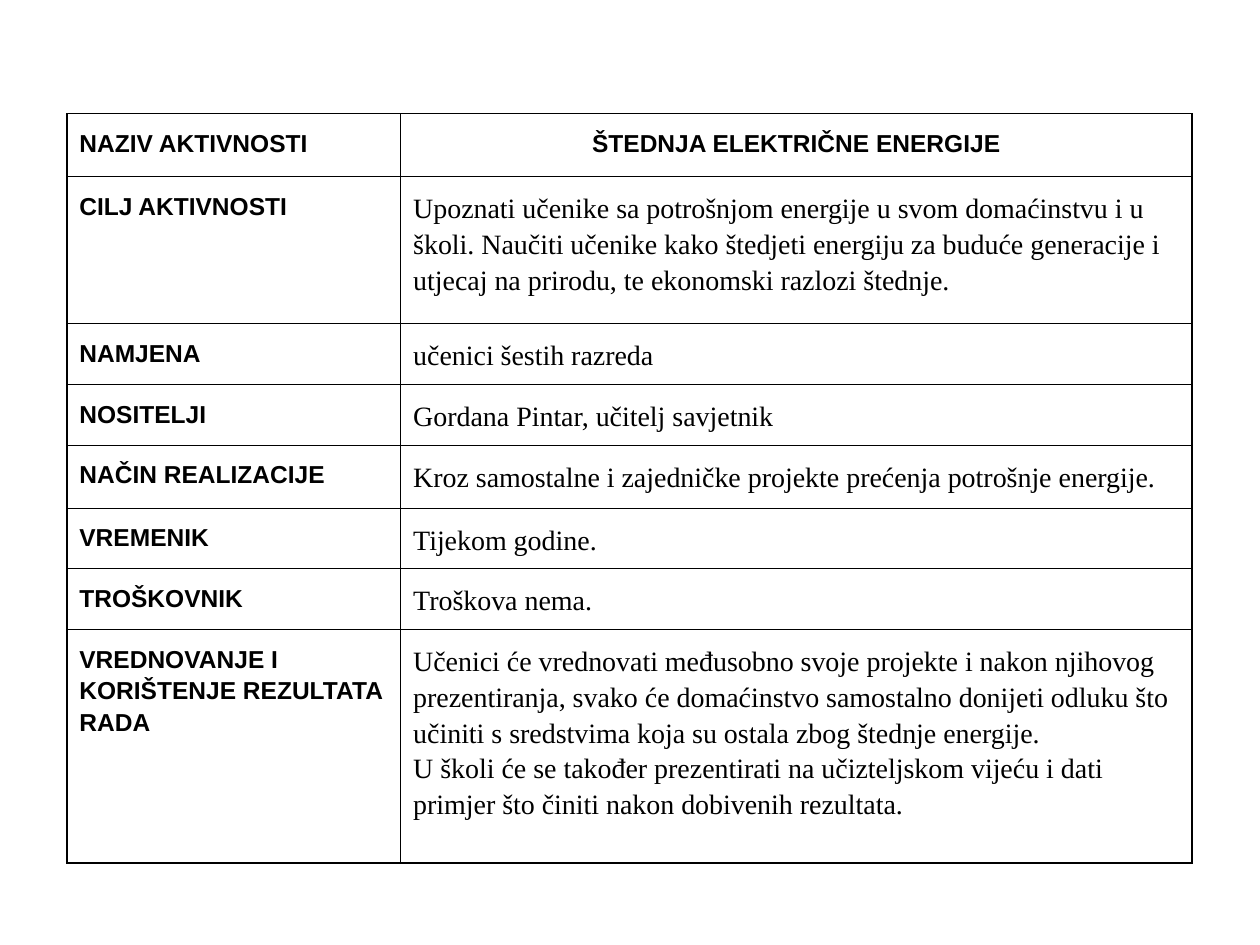
from lxml.etree import SubElement
from pptx import Presentation
from pptx.dml.color import RGBColor
from pptx.enum.text import PP_ALIGN as Align
from pptx.oxml.ns import qn
from pptx.util import Cm, Pt

INK = "000000"
COLUMN_WIDTHS = (6.73, 15.95)
ACTIVITY = [  # label, paragraphs, row height in cm
    ("NAZIV AKTIVNOSTI", ["ŠTEDNJA ELEKTRIČNE ENERGIJE"], 1.27),
    ("CILJ AKTIVNOSTI",
     ["Upoznati učenike sa potrošnjom energije u svom domaćinstvu i u školi. "
      "Naučiti učenike kako štedjeti energiju za buduće generacije i utjecaj "
      "na prirodu, te ekonomski razlozi štednje."], 2.97),
    ("NAMJENA", ["učenici šestih razreda"], 1.22),
    ("NOSITELJI", ["Gordana Pintar, učitelj savjetnik"], 1.22),
    ("NAČIN REALIZACIJE",
     ["Kroz samostalne i zajedničke projekte prećenja potrošnje energije."], 1.27),
    ("VREMENIK", ["Tijekom godine."], 1.22),
    ("TROŠKOVNIK", ["Troškova nema."], 1.22),
    ("VREDNOVANJE I KORIŠTENJE REZULTATA RADA",
     ["Učenici će vrednovati međusobno svoje projekte i nakon njihovog "
      "prezentiranja, svako će domaćinstvo samostalno donijeti odluku što "
      "učiniti s sredstvima koja su ostala zbog štednje energije.",
      "U školi će se također prezentirati na učizteljskom vijeću i dati "
      "primjer što činiti nakon dobivenih rezultata."], 4.71),
]


def color(value):
    return RGBColor.from_string(value)


def add_borders(cell, value=INK, width=0.75):
    properties = cell._tc.get_or_add_tcPr()
    for side in ("a:lnL", "a:lnR", "a:lnT", "a:lnB"):
        line = SubElement(properties, qn(side), w=str(Pt(width)))
        fill = SubElement(line, qn("a:solidFill"))
        SubElement(fill, qn("a:srgbClr"), val=value)


def fill_cell(cell, paragraphs, heading, align=Align.LEFT):
    cell.margin_left = cell.margin_right = Cm(0.25)
    cell.margin_top = cell.margin_bottom = Cm(0.25)
    add_borders(cell)
    cell.fill.background()
    cell.text_frame.text = "\n".join(paragraphs)
    for paragraph in cell.text_frame.paragraphs:
        paragraph.alignment = align
        paragraph.line_spacing = 1.15
        font = paragraph.font
        font.name = "Arial" if heading else "Times New Roman"
        font.size = Pt(14 if heading else 16)
        font.bold = heading
        font.color.rgb = color(INK)


def add_activity_table(slide, left, top, widths, activity):
    height = sum(row_height for _, _, row_height in activity)
    table = slide.shapes.add_table(len(activity), len(widths), Cm(left), Cm(top),
                                   Cm(sum(widths)), Cm(height)).table
    table.first_row = table.horz_banding = False
    for column, width in zip(table.columns, widths):
        column.width = Cm(width)
    for index, (label, description, row_height) in enumerate(activity):
        table.rows[index].height = Cm(row_height)
        is_title = index == 0
        fill_cell(table.cell(index, 0), [label], heading=True)
        fill_cell(table.cell(index, 1), description, heading=is_title,
                  align=Align.CENTER if is_title else Align.LEFT)


def main():
    deck = Presentation()
    deck.slide_width, deck.slide_height = Cm(25.4), Cm(19.05)
    slide = deck.slides.add_slide(deck.slide_layouts[6])
    add_activity_table(slide, 1.35, 2.29, COLUMN_WIDTHS, ACTIVITY)
    deck.save("out.pptx")


if __name__ == "__main__":
    main()
